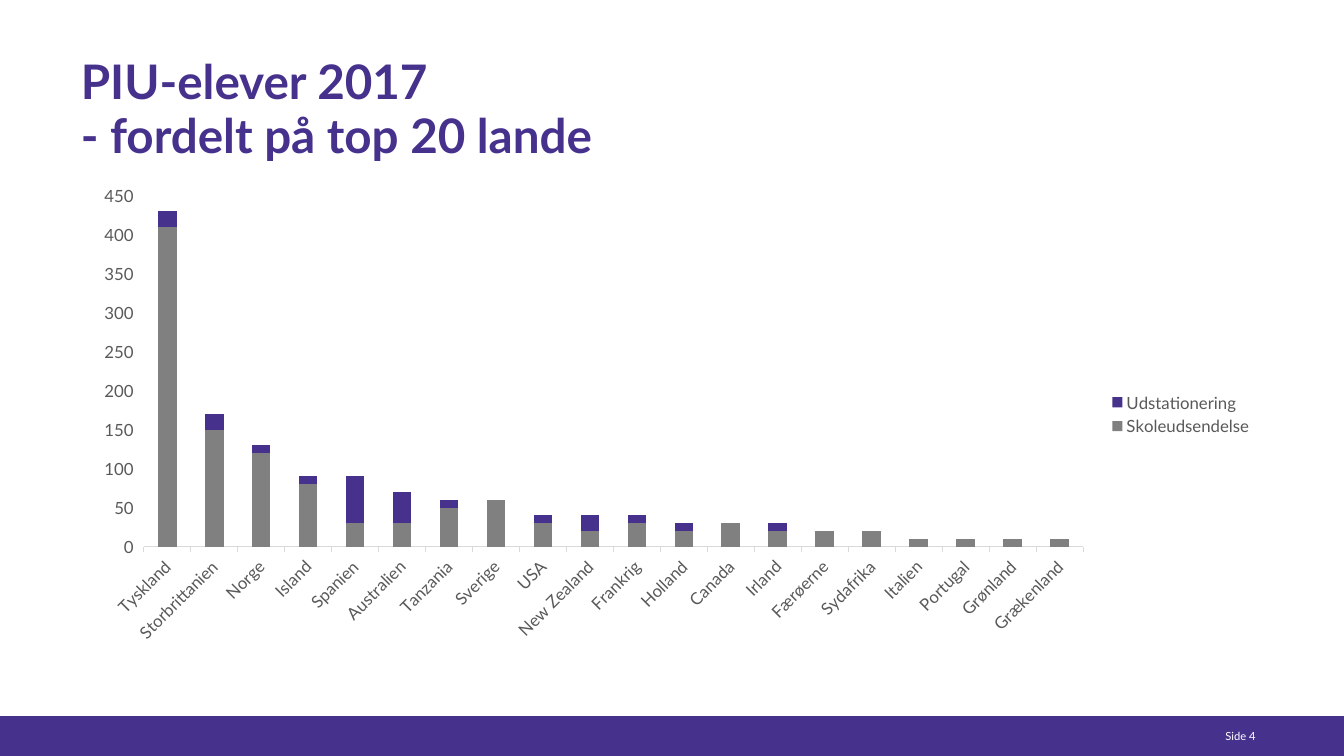
from dataclasses import dataclass
from typing import NamedTuple

from pptx import Presentation
from pptx import util as u
from pptx.chart.data import CategoryChartData
from pptx.dml.color import RGBColor
from pptx.enum import chart as ch, shapes, text

EMU_PER_PX = 9525
FONT = "Lato"
PURPLE, GREY, WHITE = "46328C", "808080", "FFFFFF"
LABEL_GREY, AXIS_GREY = "595959", "D9D9D9"


class Area(NamedTuple):
    left: int
    top: int
    width: int
    height: int


class Country(NamedTuple):
    name: str
    school: int
    posted: int


@dataclass
class Label:
    area: Area
    words: str
    size: int
    color: str
    anchor: text.MSO_ANCHOR
    bold: bool = False
    spacing: float = 1.0


COUNTRIES = [
    Country("Tyskland", 410, 20),
    Country("Storbrittanien", 150, 20),
    Country("Norge", 120, 10),
    Country("Island", 80, 10),
    Country("Spanien", 30, 60),
    Country("Australien", 30, 40),
    Country("Tanzania", 50, 10),
    Country("Sverige", 60, 0),
    Country("USA", 30, 10),
    Country("New Zealand", 20, 20),
    Country("Frankrig", 30, 10),
    Country("Holland", 20, 10),
    Country("Canada", 30, 0),
    Country("Irland", 20, 10),
    Country("Færøerne", 20, 0),
    Country("Sydafrika", 20, 0),
    Country("Italien", 10, 0),
    Country("Portugal", 10, 0),
    Country("Grønland", 10, 0),
    Country("Grækenland", 10, 0),
]

LABELS = [
    Label(Area(77, 54, 1126, 98), "PIU-elever 2017\v- fordelt på top 20 lande",
          34, PURPLE, text.MSO_ANCHOR.TOP, bold=True, spacing=0.94),
    Label(Area(1167, 688, 47, 19), "Side 4", 8, WHITE, text.MSO_ANCHOR.BOTTOM),
]


def px(length: int) -> u.Emu:
    return u.Emu(length * EMU_PER_PX)


def place(area: Area) -> list[u.Emu]:
    return [px(length) for length in area]


def rgb(code: str) -> RGBColor:
    return RGBColor.from_string(code)


def style_font(font, size: int, color: str, bold: bool = False) -> None:
    font.name, font.size, font.bold = FONT, u.Pt(size), bold
    font.color.rgb = rgb(color)


def add_label(page, label: Label) -> None:
    frame = page.shapes.add_textbox(*place(label.area)).text_frame
    frame.word_wrap = True
    frame.vertical_anchor = label.anchor
    frame.margin_left = frame.margin_right = frame.margin_top = frame.margin_bottom = 0
    para = frame.paragraphs[0]
    para.text = label.words
    para.line_spacing = label.spacing
    for span in para.runs:
        style_font(span.font, label.size, label.color, label.bold)


def add_band(page, area: Area) -> None:
    band = page.shapes.add_shape(shapes.MSO_SHAPE.RECTANGLE, *place(area))
    band.shadow.inherit = False
    band.fill.solid()
    band.fill.fore_color.rgb = rgb(PURPLE)
    band.line.fill.background()


def add_country_chart(page, area: Area) -> None:
    data = CategoryChartData()
    data.categories = [country.name for country in COUNTRIES]
    data.add_series("Skoleudsendelse", [country.school for country in COUNTRIES])
    data.add_series("Udstationering", [country.posted for country in COUNTRIES])
    chart = page.shapes.add_chart(
        ch.XL_CHART_TYPE.COLUMN_STACKED, *place(area), data).chart
    chart.has_title = False
    style_font(chart.font, 10, "000000")

    # Columns
    plot = chart.plots[0]
    plot.gap_width, plot.overlap = 150, 100
    plot.vary_by_categories = False
    for series, color in zip(plot.series, (GREY, PURPLE)):
        series.format.fill.solid()
        series.format.fill.fore_color.rgb = rgb(color)

    # Axes
    for axis in (chart.category_axis, chart.value_axis):
        axis.has_major_gridlines = False
        axis.major_tick_mark = ch.XL_TICK_MARK.OUTSIDE
        style_font(axis.tick_labels.font, 12, LABEL_GREY)
    chart.category_axis.format.line.color.rgb = rgb(AXIS_GREY)
    chart.category_axis.format.line.width = u.Pt(0.75)
    values = chart.value_axis
    values.format.line.fill.background()
    values.minimum_scale, values.maximum_scale, values.major_unit = 0, 450, 50

    # Legend
    chart.has_legend = True
    chart.legend.position = ch.XL_LEGEND_POSITION.RIGHT
    chart.legend.include_in_layout = False
    style_font(chart.legend.font, 12, LABEL_GREY)


def main() -> None:
    deck = Presentation()
    deck.slide_width, deck.slide_height = px(1280), px(720)
    page = deck.slides.add_slide(deck.slide_layouts[6])
    add_band(page, Area(0, 682, 1280, 38))
    add_country_chart(page, Area(77, 168, 1126, 453))
    for label in LABELS:
        add_label(page, label)
    deck.save("out.pptx")


if __name__ == "__main__":
    main()
